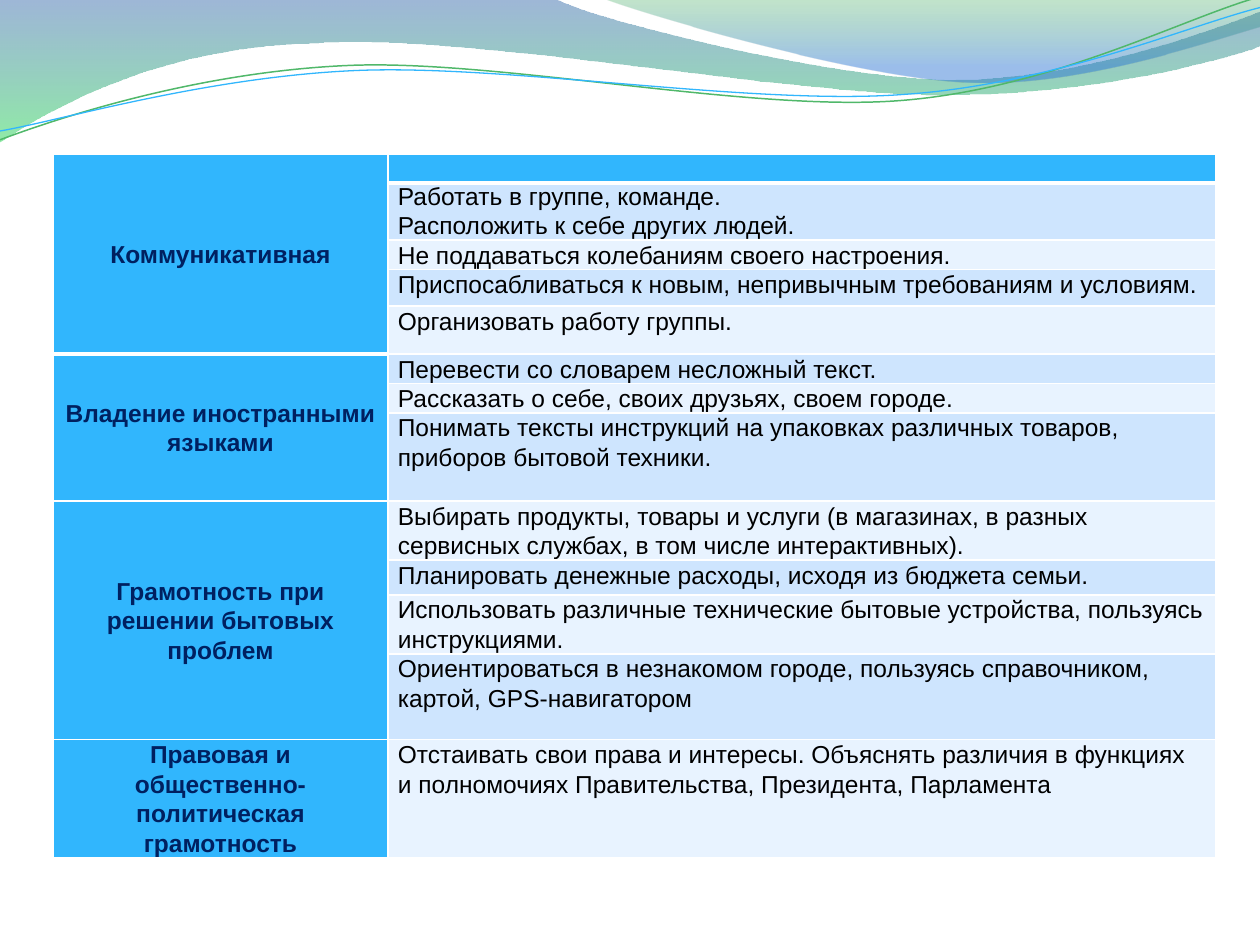
"""Build a slide with a wave header and a table of competences."""
import lxml.etree
import pptx
import pptx.dml.color
import pptx.enum.text
import pptx.oxml
import pptx.oxml.ns
import pptx.util

Cm = pptx.util.Cm
Pt = pptx.util.Pt
qn = pptx.oxml.ns.qn
RGB = pptx.dml.color.RGBColor
ALIGN = pptx.enum.text.PP_ALIGN
ANCHOR = pptx.enum.text.MSO_ANCHOR

SKY = RGB(0x31, 0xB6, 0xFD)
NAVY = RGB(0x00, 0x20, 0x60)
BLACK = RGB(0, 0, 0)
PALE = RGB(0xE8, 0xF3, 0xFF)
LIGHT = RGB(0xCE, 0xE5, 0xFE)
LEAF = RGB(0x50, 0xB8, 0x6A)
STEEL = RGB(0x29, 0x60, 0xA7)
LIME = RGB(0x35, 0xDA, 0x5E)
MOSS = RGB(0x36, 0xA7, 0x52)
BLUE = RGB(0x24, 0x72, 0xD3)

deck = pptx.Presentation()
deck.slide_width, deck.slide_height = Cm(25.4), Cm(19.05)
slide = deck.slides.add_slide(deck.slide_layouts[6])


def draw(start, parts, closed):
    """Draw an outline of straight (2 numbers) and cubic (6 numbers) parts."""
    ends = [(Cm(2.54 * p[-2]), Cm(2.54 * p[-1])) for p in [start] + parts]
    pen = slide.shapes.build_freeform(*ends[0])
    pen.add_line_segments(ends[1:], close=closed)
    shape = pen.convert_to_shape()
    shape.shadow.inherit = False
    left, top = shape.left, shape.top
    route = next(shape.element.spPr.iter(qn("a:path")))
    for old, part in zip(list(route)[1:], parts):
        if len(part) == 6:
            curve = lxml.etree.Element(qn("a:cubicBezTo"))
            for x, y in zip(part[::2], part[1::2]):
                lxml.etree.SubElement(curve, qn("a:pt"), x=str(Cm(2.54 * x) - left),
                                      y=str(Cm(2.54 * y) - top))
            route.replace(old, curve)
    return shape


def style(item, form):
    """Set each attribute named in the format."""
    for name, value in form.items():
        setattr(item, name, value)


waves = [
    ((0, 0), [(4.4, -0.01), (4.76, 0.17, 6.64, 0.63, 7.58, 0.63),
              (8.53, 0.63, 9.58, 0.26, 10, 0.09), (10.01, 0.36),
              (9.83, 0.44, 8.7, 0.76, 7.46, 0.75),
              (6.22, 0.75, 3.82, 0.28, 2.57, 0.34),
              (1.29, 0.36, 0.46, 0.83, -0.01, 1.13)],
     [(0, STEEL, 45), (1, LIME, 55)]),
    ((4.79, -0.01), [(5.09, 0.11, 6.82, 0.62, 7.69, 0.65),
                     (8.56, 0.69, 9.61, 0.32, 10, 0.21), (10, 0)],
     [(0, MOSS, 30), (0.8, BLUE, 45)]),
]
for start, parts, stops in waves:
    wave = draw(start, parts, True)
    wave.line.fill.background()
    wave.fill.gradient()
    wave.fill.gradient_angle = 270
    for stop, (place, color, alpha) in zip(wave.fill.gradient_stops, stops):
        stop.position = place
        stop.color.rgb = color
    tags = wave.element.spPr.iter(qn("a:srgbClr"))
    for tag, (place, color, alpha) in zip(tags, stops):
        lxml.etree.SubElement(tag, qn("a:alpha"), val=str(alpha * 1000))

lines = [
    ((0, 1.11), [(0.48, 0.93, 1.58, 0.57, 2.77, 0.52),
                 (3.95, 0.47, 5.93, 0.89, 7.13, 0.8),
                 (8.33, 0.71, 9.38, 0.15, 9.98, -0.02)], LEAF, 0.85),
    ((0, 1.04), [(0.47, 0.96, 1.64, 0.61, 2.83, 0.56),
                 (4.03, 0.51, 5.97, 0.84, 7.17, 0.75),
                 (8.36, 0.67, 9.41, 0.21, 10, 0.06)], SKY, 0.75),
]
for start, parts, color, width in lines:
    line = draw(start, parts, False)
    line.fill.background()
    line.line.color.rgb = color
    line.line.width = Pt(width)

groups = [
    ("Коммуникативная", [
        (0.58, ""),
        (1.14, "Работать в группе, команде.\nРасположить к себе других людей."),
        (0.58, "Не поддаваться колебаниям своего настроения."),
        (0.74, "Приспосабливаться к новым, непривычным требованиям и условиям."),
        (0.96, "Организовать работу группы.")]),
    ("Владение иностранными языками", [
        (0.58, "Перевести со словарем несложный текст."),
        (0.58, "Рассказать о себе, своих друзьях, своем городе."),
        (1.78, "Понимать тексты инструкций на упаковках различных товаров, "
               "приборов бытовой техники.")]),
    ("Грамотность при решении бытовых проблем", [
        (1.19, "Выбирать продукты, товары и услуги (в магазинах, в разных "
               "сервисных службах, в том числе интерактивных)."),
        (0.7, "Планировать денежные расходы, исходя из бюджета семьи."),
        (1.19, "Использовать различные технические бытовые устройства, "
               "пользуясь инструкциями."),
        (1.73, "Ориентироваться в незнакомом городе, пользуясь справочником, "
               "картой, GPS-навигатором")]),
    ("Правовая и общественно-политическая грамотность", [
        (2.38, "Отстаивать свои права и интересы. Объяснять различия в функциях "
               "и полномочиях Правительства, Президента, Парламента")]),
]
rows = [row for name, items in groups for row in items]
high = sum(tall for tall, text in rows)
grid = slide.shapes.add_table(len(rows), 2, Cm(1.07), Cm(3.11),
                              Cm(23.44), Cm(high)).table
for col, width in zip(grid.columns, (6.75, 16.69)):
    col.width = Cm(width)

pad = {"margin_left": Cm(0.2), "margin_right": Cm(0.2),
       "margin_top": 0, "margin_bottom": 0}
head = {"size": Pt(14), "name": "Arial", "bold": True}
body = {**head, "bold": False}
space = {"line_spacing": 1.07, "space_after": Pt(7.5)}

cells = []
row = 0
for name, items in groups:
    for i, (tall, text) in enumerate(items):
        grid.rows[row + i].height = Cm(tall)
        fill = SKY if row + i == 0 else (LIGHT if (row + i) % 2 else PALE)
        cells.append((row + i, 0, "" if i else name, SKY))
        cells.append((row + i, 1, text, fill))
    if len(items) > 1:
        grid.cell(row, 0).merge(grid.cell(row + len(items) - 1, 0))
    row += len(items)

first = len(groups[0][1])
for row, col, text, fill in cells:
    cell = grid.cell(row, col)
    edge = 1 if col else first
    thick = {"T": row == edge, "B": row in (0, edge - 1)}
    for side in "LRTB":
        width = Pt(3 if thick.get(side) else 1)
        cell._tc.get_or_add_tcPr().append(pptx.oxml.parse_xml(
            f'<a:ln{side} {pptx.oxml.ns.nsdecls("a")} w="{width}"><a:solidFill>'
            f'<a:srgbClr val="FFFFFF"/></a:solidFill></a:ln{side}>'))
    cell.fill.solid()
    cell.fill.fore_color.rgb = fill
    style(cell, pad)
    cell.vertical_anchor = ANCHOR.TOP if col else ANCHOR.MIDDLE
    paras = cell.text_frame.paragraphs
    if not text:
        lxml.etree.SubElement(paras[0]._p, qn("a:endParaRPr"), sz="1000")
        continue
    cell.text = text
    paras = cell.text_frame.paragraphs
    for para in paras:
        para.alignment = ALIGN.LEFT if col else ALIGN.CENTER
        for run in para.runs:
            style(run.font, body if col else head)
            run.font.color.rgb = BLACK if col else NAVY
    style(paras[-1], space)

deck.save("out.pptx")
